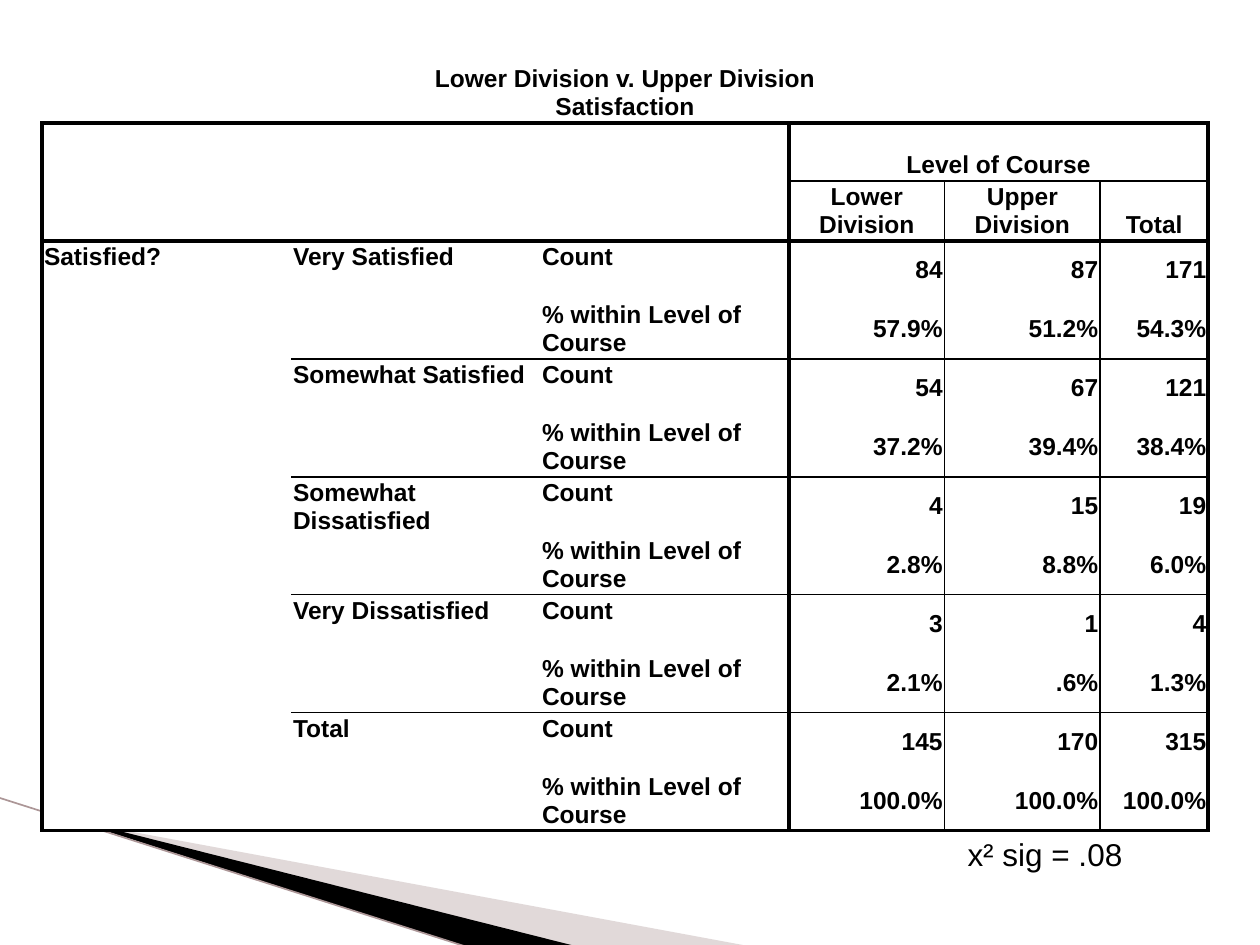
from dataclasses import dataclass

from lxml import etree
from pptx import Presentation
from pptx.dml.color import RGBColor
from pptx.enum.shapes import MSO_CONNECTOR
from pptx.enum.text import MSO_ANCHOR, MSO_AUTO_SIZE, PP_ALIGN
from pptx.oxml.ns import qn
from pptx.util import Pt

LEFT, MID, RIGHT = PP_ALIGN.LEFT, PP_ALIGN.CENTER, PP_ALIGN.RIGHT
TOP, CENTER, BOTTOM = MSO_ANCHOR.TOP, MSO_ANCHOR.MIDDLE, MSO_ANCHOR.BOTTOM
STRAIGHT = MSO_CONNECTOR.STRAIGHT
GROW = MSO_AUTO_SIZE.SHAPE_TO_FIT_TEXT


@dataclass(frozen=True)
class Theme:
    ink: str = "000000"
    paper: str = "FFFFFF"
    wedge: str = "B4A0A1"
    trail: str = "AC9697"
    font: str = "Arial"
    body: float = 14
    note: float = 18
    pitch: float = 16
    inset: float = 1.15
    heavy: float = 2.25
    thin: float = 1


theme = Theme()


def write(para, text, size, bold):
    run = para.add_run()
    run.text = text
    run.font.name = theme.font
    run.font.size = Pt(size)
    run.font.bold = bold
    run.font.color.rgb = RGBColor.from_string(theme.ink)


def rule(cell, tag, width):
    """Draw one cell edge, or clear it when the width is zero."""
    line = etree.SubElement(cell._tc.get_or_add_tcPr(), qn(tag), w=str(Pt(width)))
    if width:
        fill = etree.SubElement(line, qn("a:solidFill"))
        etree.SubElement(fill, qn("a:srgbClr"), val=theme.ink)
    else:
        etree.SubElement(line, qn("a:noFill"))


deck = Presentation()
deck.slide_width, deck.slide_height = Pt(720), Pt(540)
slide = deck.slides.add_slide(deck.slide_layouts[6])
shapes = slide.shapes

# Corner decoration
wedges = [
    (theme.wedge, 40, [(39.6, 468.7), (428.4, 540.7), (328.3, 540.7), (39.6, 468)]),
    (theme.ink, 100, [(38.2, 467.3), (329, 540.7), (267.8, 541.4), (38.9, 468)]),
]
for color, alpha, points in wedges:
    spots = [(Pt(x), Pt(y)) for x, y in points]
    pen = shapes.build_freeform(*spots[0], scale=1.0)
    pen.add_line_segments(spots[1:], close=True)
    wedge = pen.convert_to_shape()
    wedge.shadow.inherit = False
    wedge.line.fill.background()
    wedge.fill.solid()
    wedge.fill.fore_color.rgb = RGBColor.from_string(color)
    if alpha < 100:
        tint = wedge._element.spPr.find(".//" + qn("a:srgbClr"))
        etree.SubElement(tint, qn("a:alpha"), val=str(alpha * 1000))

trail = shapes.add_connector(STRAIGHT, Pt(-0.7), Pt(455.8), Pt(267.8), Pt(541.4))
trail.line.color.rgb = RGBColor.from_string(theme.trail)
trail.line.width = Pt(0.95)
etree.SubElement(trail._element.spPr, qn("a:effectLst"))

# Significance note
note = shapes.add_textbox(Pt(545.8), Pt(473.8), Pt(156.2), Pt(30.2))
note.text_frame.word_wrap = True
note.text_frame.auto_size = GROW
write(note.text_frame.paragraphs[0], "x² sig = .08", theme.note, False)

# Satisfaction table
groups = [
    ("Very Satisfied", ["84", "87", "171"], ["57.9%", "51.2%", "54.3%"]),
    ("Somewhat Satisfied", ["54", "67", "121"], ["37.2%", "39.4%", "38.4%"]),
    ("Somewhat Dissatisfied", ["4", "15", "19"], ["2.8%", "8.8%", "6.0%"]),
    ("Very Dissatisfied", ["3", "1", "4"], ["2.1%", ".6%", "1.3%"]),
    ("Total", ["145", "170", "315"], ["100.0%", "100.0%", "100.0%"]),
]
rows = [
    ["Lower Division v. Upper Division\nSatisfaction"] + [""] * 5,
    ["", "", "", "Level of Course", "", ""],
    ["", "", "", "Lower Division", "Upper Division", "Total"],
]
for name, counts, shares in groups:
    rows.append(["", name, "Count"] + counts)
    rows.append(["", "", "% within Level of Course"] + shares)
rows[3][0] = "Satisfied?"

widths = [142.3] * 3 + [88.9] * 2 + [61.7]
heights = [34.3] + [33.1, 34.3] * 6
frame = shapes.add_table(len(rows), len(widths), Pt(24), Pt(36),
                         Pt(sum(widths)), Pt(sum(heights)))
table = frame.table
table.first_row = table.horz_banding = False
for col, width in zip(table.columns, widths):
    col.width = Pt(width)
for row, height in zip(table.rows, heights):
    row.height = Pt(height)

spans = [(0, 0, 0, 5), (1, 3, 1, 5), (3, 0, 12, 0)]
spans += [(r, 1, r + 1, 1) for r in range(3, 13, 2)]
for r, c, last, end in spans:
    table.cell(r, c).merge(table.cell(last, end))

# Line weight at each column edge, and at each row edge with its first column
uprights = {0: theme.heavy, 3: theme.heavy, 4: theme.thin, 5: theme.thin, 6: theme.heavy}
levels = {r: (theme.heavy, 0) for r in (1, 3, 13)}
levels |= {r: (theme.thin, 1) for r in (5, 7, 9, 11)}
levels[2] = (theme.thin, 3)

for r, texts in enumerate(rows):
    for c, text in enumerate(texts):
        cell = table.cell(r, c)
        wide = cell.span_width if cell.is_merge_origin else 1
        tall = cell.span_height if cell.is_merge_origin else 1
        for tag, edge in (("a:lnL", c), ("a:lnR", c + wide)):
            inner = r == 1 and edge in (4, 5)
            rule(cell, tag, 0 if r == 0 or inner else uprights.get(edge, 0))
        for tag, edge in (("a:lnT", r), ("a:lnB", r + tall)):
            weight, first = levels.get(edge, (0, 0))
            rule(cell, tag, weight if c >= first else 0)
        cell.fill.solid()
        cell.fill.fore_color.rgb = RGBColor.from_string(theme.paper)
        if not text:
            continue
        cell.margin_left = cell.margin_right = Pt(theme.inset)
        cell.margin_top = cell.margin_bottom = Pt(theme.inset)
        if r < 3:
            align, anchor = MID, BOTTOM if r else CENTER
        else:
            align, anchor = (LEFT, TOP) if c < 3 else (RIGHT, CENTER)
        cell.vertical_anchor = anchor
        for i, line in enumerate(text.split("\n")):
            body = cell.text_frame
            para = body.add_paragraph() if i else body.paragraphs[0]
            para.alignment = align
            para.line_spacing = Pt(theme.pitch)
            write(para, line, theme.body, True)

deck.save("out.pptx")
